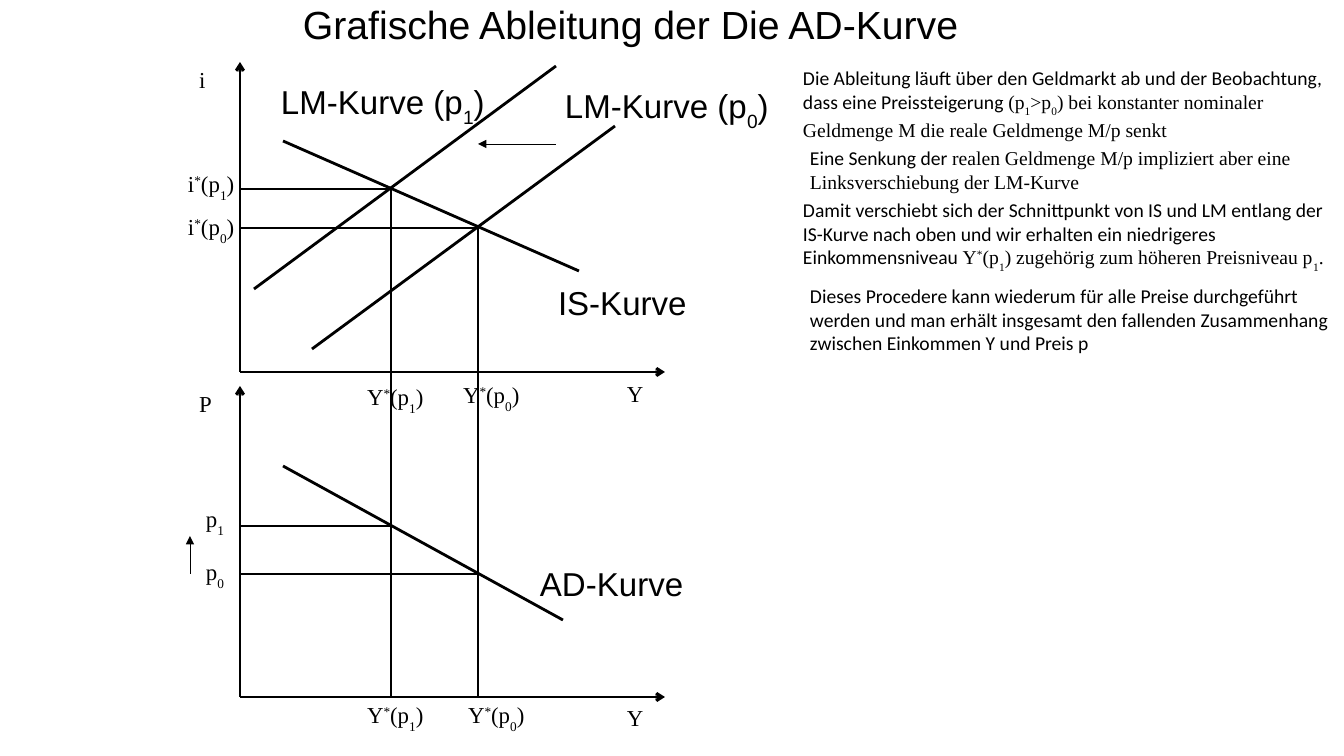
from dataclasses import dataclass
from lxml.etree import SubElement
from pptx import Presentation
from pptx.dml.color import RGBColor
from pptx.enum.shapes import MSO_CONNECTOR
from pptx.enum.text import MSO_ANCHOR, MSO_AUTO_SIZE, PP_ALIGN
from pptx.oxml.ns import qn
from pptx.util import Pt


@dataclass(frozen=True)
class Theme:
    ink: RGBColor = RGBColor(0, 0, 0)
    sans: str = "Arial"
    serif: str = "Times New Roman"
    body: str = "Calibri"
    title_size: float = 28
    curve_size: float = 23.6
    symbol_size: float = 16.3
    note_size: float = 14
    hairline: float = 0
    arrow_line: float = 0.5


THEME = Theme()
SCALE = 914400 / 100.8
PAGE_SIZE = (1344, 756)

TITLE = ("Grafische Ableitung der Die AD-Kurve", (294, -4, 928, 54))

AXIS_LEFT, AXIS_RIGHT = 240, 665
CHARTS = [
    {"symbol": "i", "top": 62, "base": 372, "income_top": 376},
    {"symbol": "P", "top": 386, "base": 697, "income_top": 700},
]
EQUILIBRIA = [
    {"income": 391, "interest": 189, "price": 526},
    {"income": 478, "interest": 228, "price": 574},
]
CURVES = [
    ((312, 349), (615, 126)),
    ((254, 289), (556, 66)),
    ((283, 141), (579, 271)),
    ((283, 466), (563, 620)),
]
SHIFTS = [
    ((556, 144), (478, 144)),
    ((190, 574), (190, 536)),
]

CURVE_LABELS = [
    ("LM-Kurve (p_0)", 556, 81, 225),
    ("LM-Kurve (p_1)", 272, 77, 225),
    ("IS-Kurve", 549, 278, 148),
    ("AD-Kurve", 531, 559, 162),
]
SYMBOL_LABELS = [
    ("i^*(p_1)", 179, 166, 67),
    ("i^*(p_0)", 179, 209, 67),
    ("Y^*(p_1)", 358, 379, 78),
    ("Y^*(p_0)", 454, 377, 78),
    ("Y^*(p_1)", 358, 697, 78),
    ("Y^*(p_0)", 459, 697, 78),
    ("p_1", 197, 501, 37),
    ("p_0", 197, 554, 37),
]
NOTES = [
    ((794, 62, 549, 81), [
        (THEME.body, "Die Ableitung läuft über den Geldmarkt ab und der Beobachtung, dass eine Preissteigerung "),
        (THEME.serif, "(p_1>p_0) bei konstanter nominaler Geldmenge M die reale Geldmenge M/p senkt"),
    ]),
    ((801, 142, 542, 58), [
        (THEME.body, "Eine Senkung der "),
        (THEME.serif, "realen Geldmenge M/p impliziert aber eine Linksverschiebung der LM-Kurve"),
    ]),
    ((794, 194, 549, 83), [
        (THEME.body, "Damit verschiebt sich der Schnittpunkt von IS und LM entlang der IS-Kurve nach oben "
                     "und wir erhalten ein niedrigeres Einkommensniveau "),
        (THEME.serif, "Y^*(p_1) zugehörig zum höheren Preisniveau p_1."),
    ]),
    ((801, 280, 542, 83), [
        (THEME.body, "Dieses Procedere kann wiederum für alle Preise durchgeführt werden und man erhält "
                     "insgesamt den fallenden Zusammenhang zwischen Einkommen Y und Preis p"),
    ]),
]
BASELINES = {"^": "33000", "_": "-33000"}


def emu(pixels):
    return round(pixels * SCALE)


def apply(target, values):
    for name, value in values.items():
        setattr(target, name, value)


def split_marks(text):
    parts, plain, position = [], "", 0
    while position < len(text):
        if text[position] in BASELINES:
            parts += [(plain, None), (text[position + 1], BASELINES[text[position]])]
            plain, position = "", position + 2
        else:
            plain, position = plain + text[position], position + 1
    return [part for part in parts + [(plain, None)] if part[0]]


def write(box, place, pieces, size, wrap, grow):
    frame = box.text_frame
    apply(frame, {
        "margin_left": emu(9), "margin_right": emu(9),
        "margin_top": emu(4), "margin_bottom": emu(4),
        "word_wrap": wrap, "vertical_anchor": MSO_ANCHOR.TOP,
        "auto_size": MSO_AUTO_SIZE.SHAPE_TO_FIT_TEXT if grow else MSO_AUTO_SIZE.NONE,
    })
    apply(box, dict(zip(("left", "top", "width", "height"), map(emu, place))))
    para = frame.paragraphs[0]
    para.alignment = PP_ALIGN.LEFT
    for font, text in pieces:
        for content, baseline in split_marks(text):
            span = para.add_run()
            span.text = content
            apply(span.font, {"name": font, "size": Pt(size)})
            span.font.color.rgb = THEME.ink
            if baseline:
                span._r.get_or_add_rPr().set("baseline", baseline)


def add_text(page, place, pieces, size, wrap=False):
    box = page.shapes.add_textbox(*map(emu, place))
    write(box, place, pieces, size, wrap, grow=not wrap)


def add_line(page, start, end, width=THEME.hairline, head=None):
    line = page.shapes.add_connector(MSO_CONNECTOR.STRAIGHT, *map(emu, start + end))
    line.line.color.rgb = THEME.ink
    line.line.width = Pt(width)
    if head:
        SubElement(line.line._get_or_add_ln(), qn("a:tailEnd"), type=head)
    SubElement(line._element.spPr, qn("a:effectLst"))


def draw_charts(page):
    for chart in CHARTS:
        origin = (AXIS_LEFT, chart["base"])
        for end in ((AXIS_LEFT, chart["top"]), (AXIS_RIGHT, chart["base"])):
            add_line(page, origin, end, head="arrow")
        add_text(page, (190, chart["top"], 31, 35), [(THEME.serif, chart["symbol"])], THEME.symbol_size)
        add_text(page, (618, chart["income_top"], 35, 35), [(THEME.serif, "Y")], THEME.symbol_size)
    for start, end in CURVES:
        add_line(page, start, end)
    for point in EQUILIBRIA:
        income = point["income"]
        add_line(page, (income, point["interest"]), (income, CHARTS[-1]["base"]))
        for level in (point["interest"], point["price"]):
            add_line(page, (income, level), (AXIS_LEFT, level))
    for start, end in SHIFTS:
        add_line(page, start, end, THEME.arrow_line, "triangle")


def main():
    deck = Presentation()
    deck.slide_width, deck.slide_height = map(emu, PAGE_SIZE)
    page = deck.slides.add_slide(deck.slide_layouts[5])
    text, place = TITLE
    write(page.shapes.title, place, [(THEME.sans, text)], THEME.title_size, wrap=True, grow=True)
    draw_charts(page)
    for labels, font, size, height in (
        (CURVE_LABELS, THEME.sans, THEME.curve_size, 47),
        (SYMBOL_LABELS, THEME.serif, THEME.symbol_size, 35),
    ):
        for text, left, top, width in labels:
            add_text(page, (left, top, width, height), [(font, text)], size)
    for place, pieces in NOTES:
        add_text(page, place, pieces, THEME.note_size, wrap=True)
    deck.save("out.pptx")


if __name__ == "__main__":
    main()
